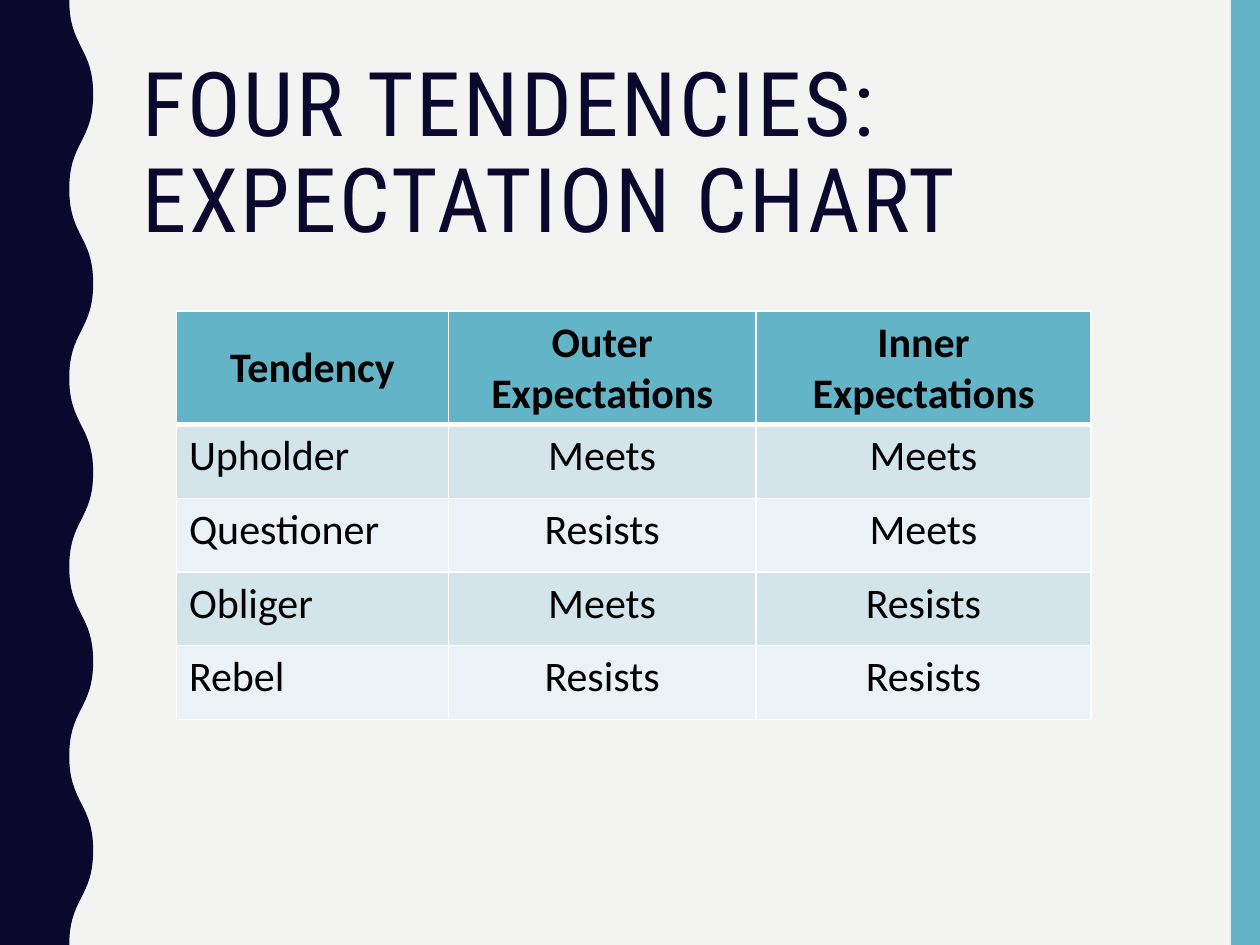
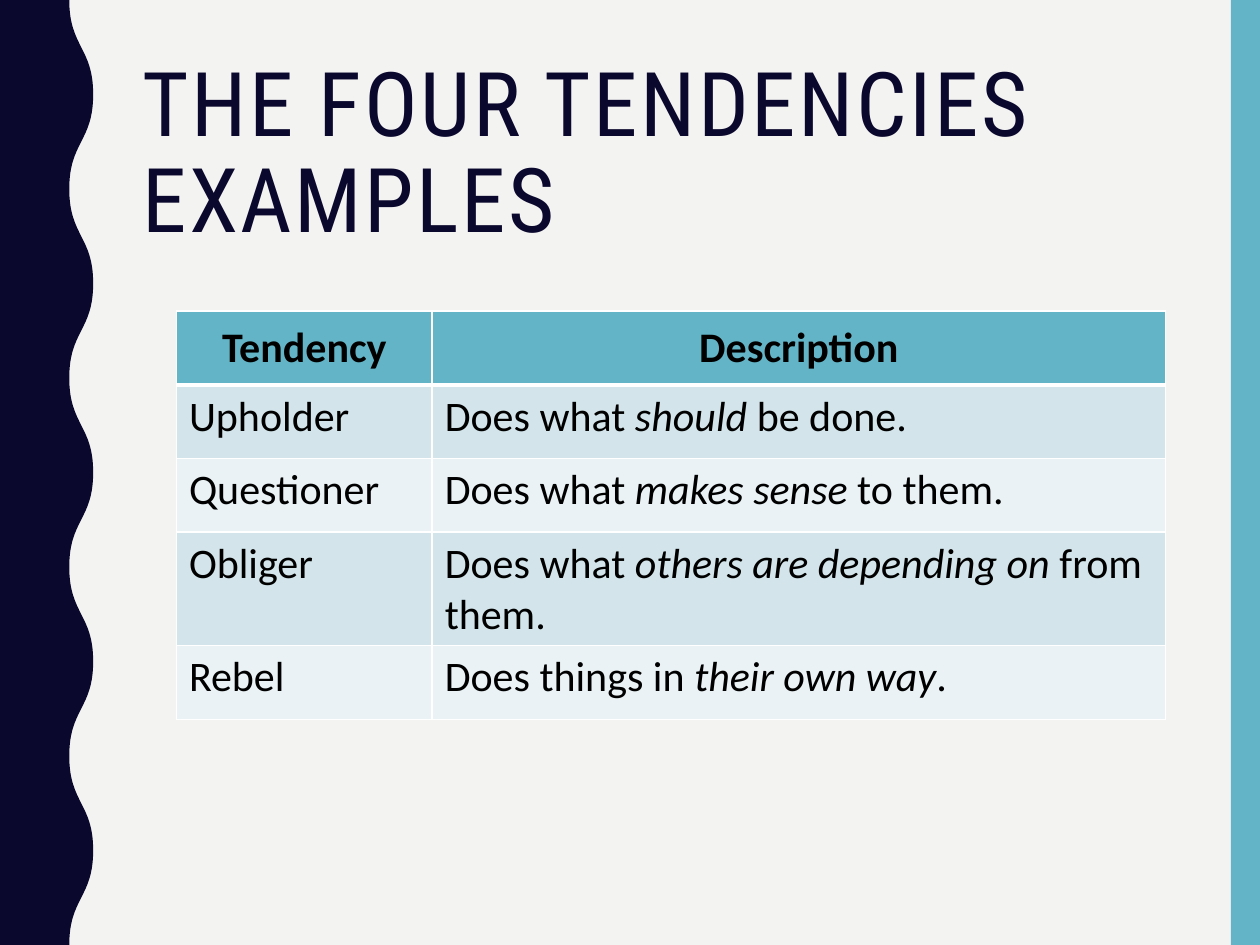
from dataclasses import dataclass

from lxml import etree
from pptx import Presentation
from pptx.dml.color import RGBColor
from pptx.enum.shapes import MSO_SHAPE
from pptx.enum.text import MSO_ANCHOR, PP_ALIGN
from pptx.oxml.ns import qn
from pptx.util import Inches, Pt

RECT = MSO_SHAPE.RECTANGLE
MIDDLE, TOP = MSO_ANCHOR.MIDDLE, MSO_ANCHOR.TOP
LEFT, CENTER = PP_ALIGN.LEFT, PP_ALIGN.CENTER
BLANK = 6

# Grid of square cells: 100 columns by 75 rows
COLS, ROWS = 100, 75
CELL = Inches(0.1)


@dataclass(frozen=True)
class Theme:
    paper: str = "F3F3F2"
    navy: str = "0B082E"
    teal: str = "62B4C6"
    bands: tuple = ("D3E5EA", "EAF2F5")
    rule: str = "FFFFFF"
    ink: str = "000000"
    title_font: str = "Roboto Condensed"
    body_font: str = "Calibri"
    title_size: int = 51
    body_size: int = 24
    title_spacing: int = 150  # hundredths of a point
    thin: int = 1
    thick: int = 3


THEME = Theme()


def grid(n):
    return round(n * CELL)


def rgb(value):
    return RGBColor.from_string(value)


def paint(fill, color):
    fill.solid()
    fill.fore_color.rgb = rgb(color)


def finish_shape(sp, color):
    sp.shadow.inherit = False
    paint(sp.fill, color)
    sp.line.fill.background()


def add_run(p, text, color, **formats):
    r = p.add_run()
    r.text = text
    r.font.color.rgb = rgb(color)
    for name, value in formats.items():
        setattr(r.font, name, value)
    return r


# Shared slide frame
def add_side_band(slide):
    width = 2.3
    sp = slide.shapes.add_shape(
        RECT, grid(COLS - width), 0, grid(width), grid(ROWS))
    finish_shape(sp, THEME.teal)


def bend(line, start, end):
    """Turn a straight segment into an S-curve, vertical at both ends."""
    middle = (start[1] + end[1]) // 2
    line.tag = qn("a:cubicBezTo")
    line.clear()
    for x, y in ((start[0], middle), (end[0], middle), end):
        etree.SubElement(line, qn("a:pt"), x=str(x), y=str(y))


def add_wave(slide, trough=5.5, crest=7.4, halves=10):
    edge = [(grid(crest if i % 2 else trough), grid(i * ROWS / halves))
            for i in range(halves + 1)]
    builder = slide.shapes.build_freeform(*edge[0])
    builder.add_line_segments([*edge[1:], (0, grid(ROWS)), (0, 0)], close=True)
    sp = builder.convert_to_shape()
    lines = list(sp._element.iter(qn("a:lnTo")))
    for line, start, end in zip(lines, edge, edge[1:]):
        bend(line, start, end)
    finish_shape(sp, THEME.navy)


def add_title(slide, text):
    box = slide.shapes.add_textbox(
        grid(10.3), grid(4.2), grid(83.5), grid(16.3))
    tf = box.text_frame
    tf.word_wrap = True
    tf.vertical_anchor = MIDDLE
    p = tf.paragraphs[0]
    p.line_spacing = 0.9
    r = add_run(p, text, THEME.navy, name=THEME.title_font,
                size=Pt(THEME.title_size))
    r.font._element.set("spc", str(THEME.title_spacing))


def new_slide(prs, title):
    slide = prs.slides.add_slide(prs.slide_layouts[BLANK])
    paint(slide.background.fill, THEME.paper)
    add_side_band(slide)
    add_wave(slide)
    add_title(slide, title)
    return slide


# Table
def set_borders(cell, **widths):
    tcPr = cell._tc.get_or_add_tcPr()
    for side in "LRTB":
        ln = etree.SubElement(tcPr, qn(f"a:ln{side}"),
                              w=str(Pt(widths.get(side, THEME.thin))))
        fill = etree.SubElement(ln, qn("a:solidFill"))
        etree.SubElement(fill, qn("a:srgbClr"), val=THEME.rule)


def fill_cell(cell, text, row, align):
    """Write one cell; text between asterisks is italic."""
    header = row == 0
    edges = {0: {"B": THEME.thick}, 1: {"T": THEME.thick}}
    set_borders(cell, **edges.get(row, {}))
    paint(cell.fill, THEME.teal if header else THEME.bands[(row - 1) % 2])
    cell.vertical_anchor = MIDDLE if header else TOP
    p = cell.text_frame.paragraphs[0]
    p.alignment = CENTER if header else align
    for i, part in enumerate(text.split("*")):
        if part:
            add_run(p, part, THEME.ink, name=THEME.body_font,
                    size=Pt(THEME.body_size), bold=header, italic=i % 2 == 1)


def add_tendency_table(slide, rows, widths, aligns):
    height = grid(32.5)
    frame = slide.shapes.add_table(
        len(rows), len(widths), grid(14), grid(24.7),
        grid(sum(widths)), height)
    table = frame.table
    for column, width in zip(table.columns, widths):
        column.width = grid(width)
    for i, texts in enumerate(rows):
        table.rows[i].height = grid(5.85)
        for j, text in enumerate(texts):
            fill_cell(table.cell(i, j), text, i, aligns[j])
    frame.height = height  # leaves room for the row that wraps


# Content
EXPECTATIONS = [
    ("Tendency", "Outer Expectations", "Inner Expectations"),
    ("Upholder", "Meets", "Meets"),
    ("Questioner", "Resists", "Meets"),
    ("Obliger", "Meets", "Resists"),
    ("Rebel", "Resists", "Resists"),
]
EXAMPLES = [
    ("Tendency", "Description"),
    ("Upholder", "Does what *should* be done."),
    ("Questioner", "Does what *makes sense *to them."),
    ("Obliger", "Does what *others are depending on *from them."),
    ("Rebel", "Does things in *their own way*."),
]


def main():
    prs = Presentation()
    prs.slide_width, prs.slide_height = grid(COLS), grid(ROWS)

    slide = new_slide(prs, "FOUR TENDENCIES: EXPECTATION CHART")
    add_tendency_table(slide, EXPECTATIONS, (21.6, 24.4, 26.6),
                       (LEFT, CENTER, CENTER))

    slide = new_slide(prs, "THE FOUR TENDENCIES EXAMPLES")
    add_tendency_table(slide, EXAMPLES, (20.3, 58.2), (LEFT, LEFT))

    prs.save("out.pptx")


if __name__ == "__main__":
    main()
